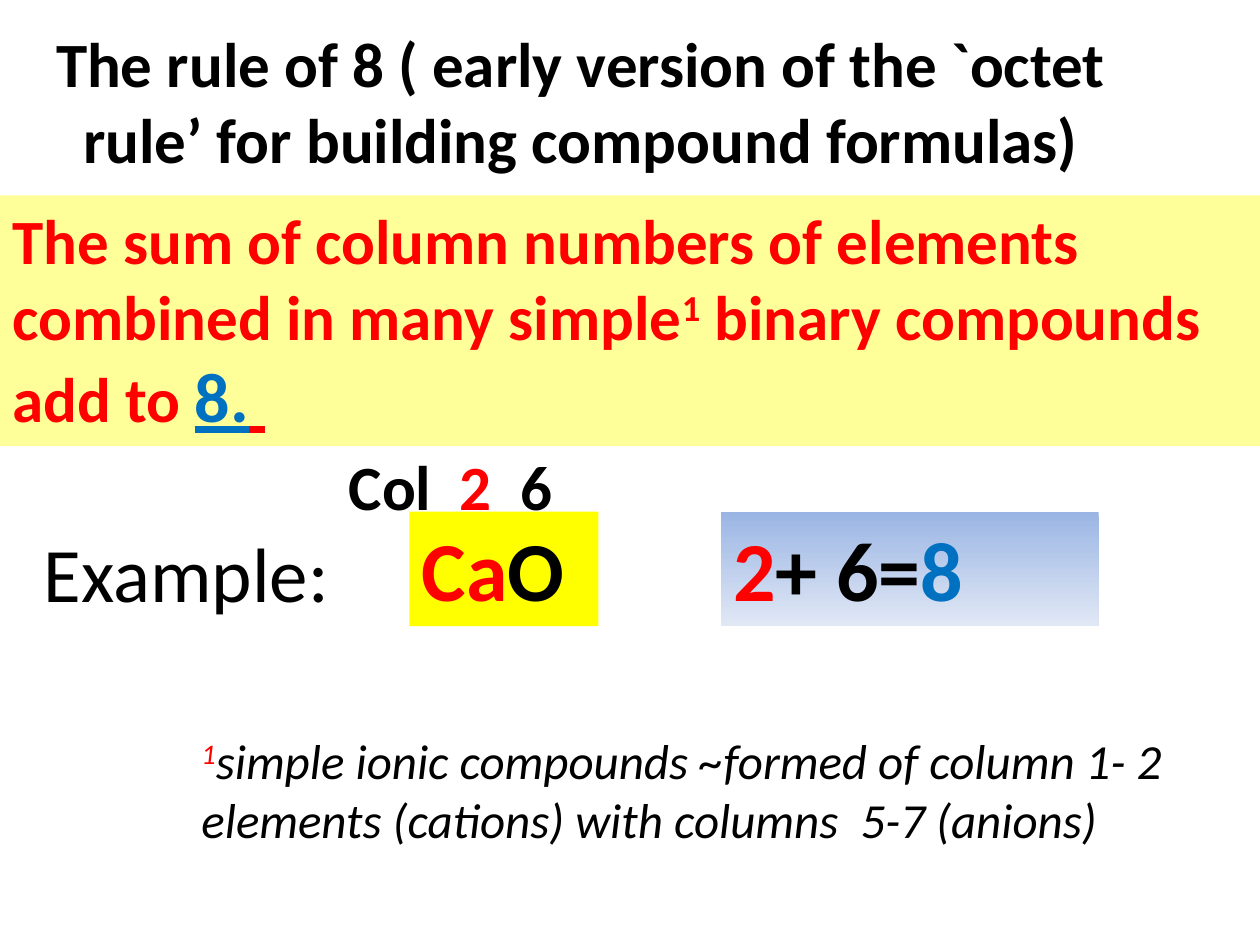
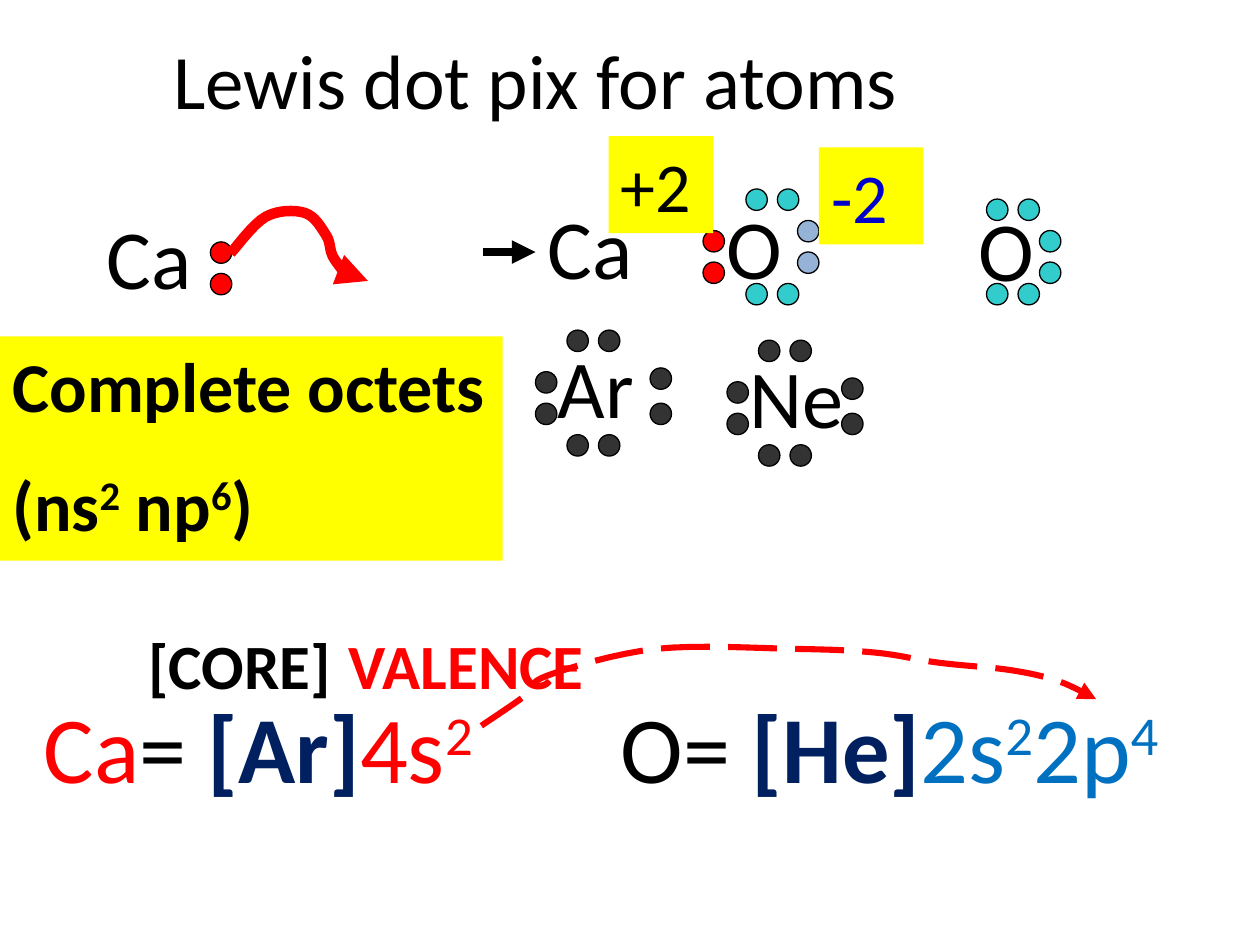
from collections import namedtuple
from pptx import Presentation
from pptx.util import Inches, Pt
from pptx.dml.color import RGBColor as RGB
from pptx.enum.dml import MSO_LINE as Dash
from pptx.enum.shapes import MSO_SHAPE as Kind, MSO_CONNECTOR as Link
from pptx.enum.text import MSO_ANCHOR as Anchor, MSO_AUTO_SIZE as Fit, PP_ALIGN as Align
from lxml.etree import SubElement
from pptx.oxml.ns import qn

HUES = {
    "black": "000000", "red": "FF0000", "blue": "0070C0", "navy": "002060",
    "ink": "0000CC", "cream": "FFFF99", "yellow": "FFFF00", "teal": "33CCCC",
    "steel": "95B3D7", "coal": "333333", "sky": "9AB5E4", "mist": "E1E8F5",
}
RGBS = {name: RGB.from_string(code) for name, code in HUES.items()}
FONT = "Calibri"


def write(frame, size, *lines):
    frame.word_wrap = True
    frame.auto_size = Fit.NONE
    for i, line in enumerate(lines):
        para = frame.add_paragraph() if i else frame.paragraphs[0]
        para.alignment = Align.LEFT
        if i:
            para.space_before = Pt(size / 2)
        for words, hue, marks in line:
            run = para.add_run()
            run.text = words
            font = run.font
            font.name, font.size = FONT, Pt(40 if "u" in marks else size)
            font.color.rgb = RGBS[hue]
            font.bold, font.italic = "b" in marks, "i" in marks
            font.underline = "u" in marks
            if "^" in marks:
                run._r.get_or_add_rPr().set("baseline", "30000")


def label(slide, box, size, *lines, fill=None):
    place = [Inches(n) for n in box]
    if fill:
        shape = slide.shapes.add_shape(Kind.RECTANGLE, *place)
        shape.shadow.inherit = False
        shape.line.fill.background()
        if fill == "fade":
            shape.fill.gradient()
            shape.fill.gradient_angle = 270
            for stop, hue in zip(shape.fill.gradient_stops, ("sky", "mist")):
                stop.color.rgb = RGBS[hue]
        else:
            shape.fill.solid()
            shape.fill.fore_color.rgb = RGBS[fill]
    else:
        shape = slide.shapes.add_textbox(*place)
    shape.text_frame.vertical_anchor = Anchor.TOP
    write(shape.text_frame, size, *lines)


deck = Presentation()
deck.slide_width, deck.slide_height = Inches(10), Inches(7.5)

heads = [
    ("The rule of 8 ( early version of the `octet rule’ for building compound formulas)",
     36, "b", (0.11, 0.17, 9, 1.25)),
    ("Lewis dot pix for atoms", 44, "", (0, 0, 8.5, 1.25)),
]
pages = []
for words, size, marks, box in heads:
    page = deck.slides.add_slide(deck.slide_layouts[5])
    head = page.shapes.title
    head.left, head.top, head.width, head.height = [Inches(n) for n in box]
    write(head.text_frame, size, [(words, "black", marks)])
    head.text_frame.vertical_anchor = Anchor.MIDDLE
    head.text_frame.paragraphs[0].alignment = Align.CENTER
    pages.append(page)
rule, lewis = pages

label(rule, (0, 1.55, 10, 1.99), 36, [
    ("The sum of column numbers of elements combined in many simple", "red", "b"),
    ("1", "red", "b^"),
    (" binary compounds add to ", "red", "b"),
    ("8.", "blue", "bu"),
    (" ", "red", "bu"),
], fill="cream")
label(rule, (1.5, 5.75, 7.92, 1.04), 28, [
    ("1", "red", "i^"),
    ("simple ionic compounds ~formed of column 1- 2 elements (cations) "
     "with columns  5-7 (anions)", "black", "i"),
])
label(rule, (2.67, 3.5, 3.08, 0.71), 36,
      [("Col  ", "black", "b"), ("2  ", "red", "b"), ("6", "black", "b")])
label(rule, (3.25, 4.06, 1.5, 0.91), 48,
      [("Ca", "red", "b"), ("O", "black", "b")], fill="yellow")
label(rule, (5.72, 4.06, 3, 0.91), 48,
      [("2", "red", "b"), ("+ 6=", "black", "b"), ("8", "blue", "b")], fill="fade")
label(rule, (0.25, 4.12, 2.83, 0.84), 44, [("Example:", "black", "")])

DOT, GAP = 0.17, 0.25
Ring = namedtuple("Ring", "inset wide tall drop gap")
Atom = namedtuple("Atom", "name x y size ring left top hues")
lone = Ring(inset=0.34, wide=0.76, tall=0.67, drop=0.25, gap=GAP)
ion = Ring(inset=0.34, wide=0.75, tall=0.75, drop=0.25, gap=GAP)
noble = Ring(inset=0.25, wide=0.91, tall=0.83, drop=0.3, gap=0.28)
full = dict.fromkeys(("top", "base", "left", "right"), "coal")
shared = {"top": "teal", "base": "teal", "left": "red", "right": "steel"}
atoms = [
    Atom("O", 7.67, 1.52, 48, lone, 7.49, 1.58,
         dict.fromkeys(("top", "base", "right"), "teal")),
    Atom("Ca", 0.75, 1.58, 48, lone, 0.91, 1.67, {"right": "red"}),
    Atom("O", 5.67, 1.5, 48, ion, 5.58, 1.5, shared),
    Atom("Ca", 4.25, 1.5, 48, ion, 4.25, 1.5, {}),
    Atom("Ar", 4.33, 2.62, 47, noble, 4.25, 2.62, full),
    Atom("Ne", 5.85, 2.7, 47, noble, 5.77, 2.7, full),
]
for atom in atoms:
    label(lewis, (atom.x, atom.y, 1.25, 0.9), atom.size, [(atom.name, "black", "")])
    ring = atom.ring
    sides = {
        "top": (ring.inset, 0, GAP, 0),
        "base": (ring.inset, ring.tall, GAP, 0),
        "left": (0, 0.33, 0, GAP),
        "right": (ring.wide, ring.drop, 0, ring.gap),
    }
    for side, hue in atom.hues.items():
        x, y, dx, dy = sides[side]
        for i in range(2):
            dot = lewis.shapes.add_shape(
                Kind.OVAL, Inches(atom.left + x + i * dx),
                Inches(atom.top + y + i * dy), Inches(DOT), Inches(DOT))
            dot.shadow.inherit = False
            dot.fill.solid()
            dot.fill.fore_color.rgb = RGBS[hue]
            dot.line.color.rgb = RGBS["black"]
            dot.line.width = Pt(0.75)

label(lewis, (0, 2.67, 3.99, 1.78), 40,
      [("Complete octets", "black", "b")],
      [("(ns", "black", "b"), ("2", "black", "b^"), (" np", "black", "b"),
       ("6", "black", "b^"), (")", "black", "b")], fill="yellow")
label(lewis, (6.5, 1.17, 0.83, 0.77), 40, [("-2", "ink", "")], fill="yellow")
label(lewis, (4.83, 1.08, 0.83, 0.77), 40, [("+2", "black", "")], fill="yellow")
label(lewis, (0.25, 5.42, 4, 1.01), 54,
      [("Ca", "red", ""), ("= ", "black", ""), ("[Ar]", "navy", "b"),
       ("4s", "red", ""), ("2", "red", "^")])
label(lewis, (4.83, 5.42, 4.92, 1.01), 54,
      [("O= ", "black", ""), ("[He]", "navy", "b"), ("2s", "blue", ""),
       ("2", "blue", "^"), ("2p", "blue", ""), ("4", "blue", "^")])

STEPS = 8
shift = [(3.82, 5.76), (4.17, 5.52), (4.35, 5.36), (5.21, 5.15), (6.3, 5.15),
         (6.95, 5.18), (7.45, 5.26), (8.03, 5.32), (8.41, 5.41), (8.7, 5.55)]
hop = [(1.83, 2.01), (2.11, 1.72), (2.42, 1.69), (2.59, 1.87), (2.65, 2.05),
       (2.83, 2.26), (2.92, 2.23)]
arrows = []
for knots, width, dash in ((shift, 3.5, Dash.LONG_DASH), (hop, 6, Dash.SOLID)):
    ends = knots[:1] + knots + knots[-1:]
    trail = []
    for k in range(len(knots) - 1):
        for step in range(STEPS):
            t = step / STEPS
            trail.append([
                Inches(b + t * (c - a) / 2 + t * t * (2 * a - 5 * b + 4 * c - d) / 2
                       + t ** 3 * (3 * b - a - 3 * c + d) / 2)
                for a, b, c, d in zip(*ends[k:k + 4])])
    trail.append([Inches(n) for n in knots[-1]])
    pen = lewis.shapes.build_freeform(*trail[0])
    pen.add_line_segments(trail[1:], close=False)
    curve = pen.convert_to_shape()
    curve.shadow.inherit = False
    curve.fill.background()
    curve.line.dash_style = dash
    arrows.append((curve, "red", width))

shaft = lewis.shapes.add_connector(Link.STRAIGHT, Inches(3.83), Inches(2),
                                   Inches(4.25), Inches(2))
arrows.append((shaft, "black", 4.5))
for arrow, hue, width in arrows:
    arrow.line.color.rgb = RGBS[hue]
    arrow.line.width = Pt(width)
    SubElement(arrow.line._get_or_add_ln(), qn("a:tailEnd"), type="triangle")
SubElement(shaft._element.spPr, qn("a:effectLst"))

label(lewis, (1.08, 4.92, 1.67, 0.71), 36, [("[CORE]", "black", "b")])
label(lewis, (2.67, 4.92, 2.5, 0.71), 36, [("VALENCE", "red", "b")])

deck.save("out.pptx")
